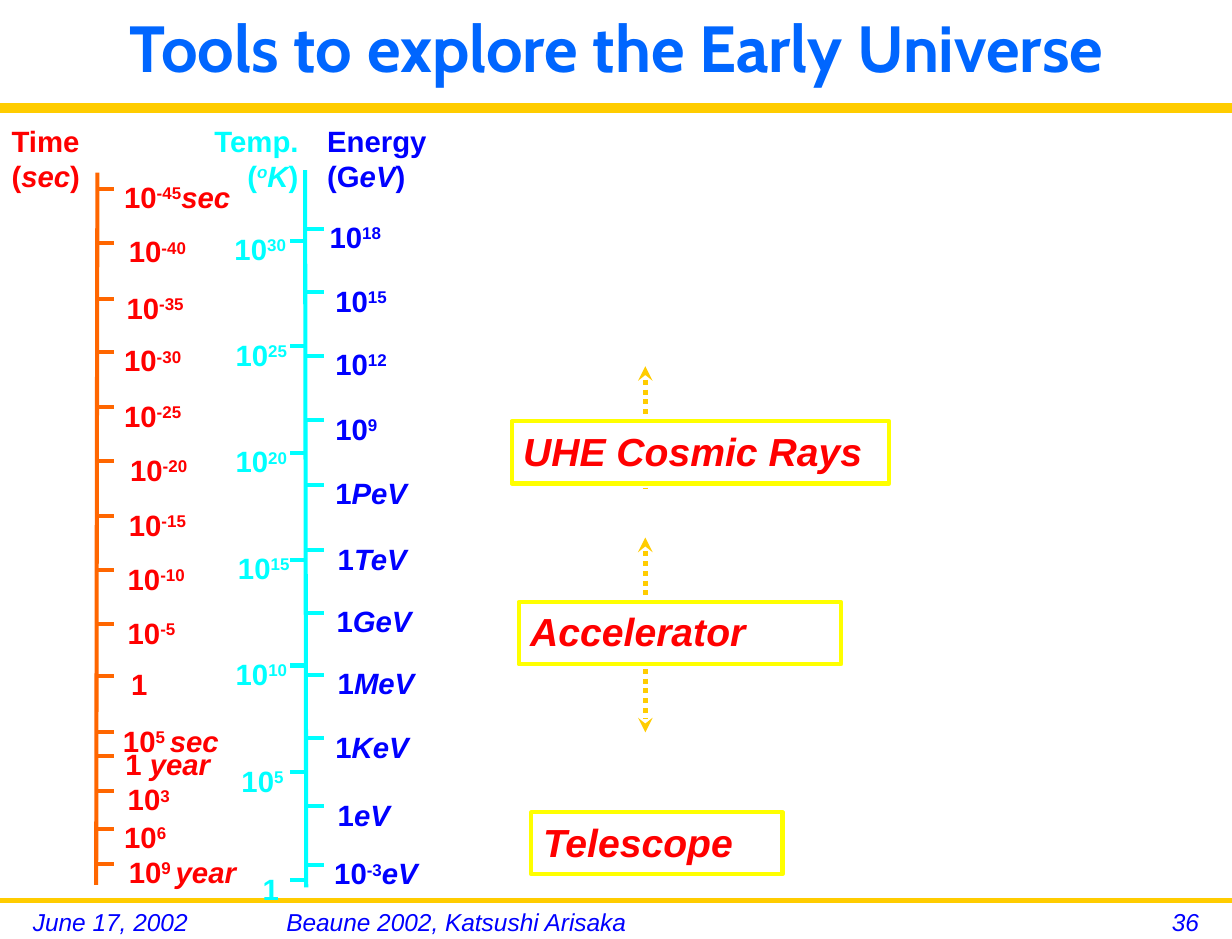
from pptx import Presentation
from pptx.dml.color import RGBColor
from pptx.enum.dml import MSO_LINE
from pptx.enum.shapes import MSO_CONNECTOR, MSO_SHAPE
from pptx.enum.text import MSO_ANCHOR, MSO_AUTO_SIZE, PP_ALIGN
from pptx.util import Inches, Pt
from lxml.etree import SubElement
from pptx.oxml.ns import qn

RED, BLUE, CYAN = "FF0000", "0000FF", "00FFFF"
GOLD, ORANGE, YELLOW = "FFCC00", "FF6600", "FFFF00"

TIMES = [
    ("10^-45^_sec_", 1.61, 0.96, 1.2), ("10^-40", 2.07, 1, 0.8),
    ("10^-35", 2.55, 0.98, 0.95), ("10^-30", 3, 0.96, 0.84),
    ("10^-25", 3.47, 0.96, 0.96), ("10^-20", 3.93, 1.01, 0.91),
    ("10^-15", 4.4, 1, 0.8), ("10^-10", 4.86, 0.99, 0.93),
    ("10^-5", 5.32, 0.99, 0.94), ("1", 5.76, 1.02, 0.71),
    ("10^5 ^_sec_", 6.24, 0.95, 1.13), ("1 _year_", 6.44, 0.97, 1.13),
    ("10^3", 6.74, 0.99, 0.71), ("10^6", 7.06, 0.96, 0.71),
    ("10^9 ^_year_", 7.36, 1, 1.58),
]
TEMPS = [
    ("10^30", 2.05, 1.9, 0.81), ("10^25", 2.95, 1.91, 0.8),
    ("10^20", 3.86, 1.91, 0.8), ("10^15", 4.77, 1.93, 0.78),
    ("10^10", 5.67, 1.91, 0.68), ("10^5", 6.58, 1.96, 0.67),
    ("1", 7.5, 2.14, 0.42),
]
POWERS = [
    ("10^18", 1.95, 2.71, 1.29), ("10^15", 2.49, 2.76, 0.78),
    ("10^12", 3.03, 2.76, 0.78), ("10^9", 3.58, 2.76, 0.78),
    ("1_PeV_", 4.13, 2.76, 1.1), ("1_TeV_", 4.69, 2.78, 1.01),
    ("1_GeV_", 5.22, 2.77, 1.06), ("1_MeV_", 5.75, 2.78, 1.02),
    ("1_KeV_", 6.29, 2.76, 1.04), ("1_eV_", 6.87, 2.78, 0.99),
    ("10^-3^_eV_", 7.37, 2.75, 0.99),
]


def color(code):
    return RGBColor.from_string(code)


def write(frame, text, size=18, tint=RED, font="Arial", bold=True,
          slant=False, align=PP_ALIGN.LEFT, space=None, indent=0,
          anchor=MSO_ANCHOR.TOP, inset=0.1, grow=True):
    frame.word_wrap = True
    frame.auto_size = MSO_AUTO_SIZE.SHAPE_TO_FIT_TEXT if grow else MSO_AUTO_SIZE.NONE
    frame.vertical_anchor = anchor
    frame.margin_left = frame.margin_right = Inches(inset)
    frame.margin_top = frame.margin_bottom = Inches(0.05)
    for row, line in enumerate(text.split("\n")):
        para = frame.add_paragraph() if row else frame.paragraphs[0]
        para.alignment = align
        if space:
            para.line_spacing = space
        if row and indent:
            para._p.get_or_add_pPr().set("marL", str(Inches(indent)))
        for high, part in enumerate(line.split("^")):
            for lean, bit in enumerate(part.split("_")):
                if not bit:
                    continue
                run = para.add_run()
                run.text = bit
                run.font.name = font
                run.font.size = Pt(size)
                run.font.bold = bold
                run.font.italic = slant or lean % 2 == 1
                run.font.color.rgb = color(tint)
                if high % 2:
                    run._r.get_or_add_rPr().set("baseline", "30000")


def label(slide, text, left, top, width, height=0.4, **style):
    box = slide.shapes.add_textbox(
        Inches(left), Inches(top), Inches(width), Inches(height))
    write(box.text_frame, text, **style)


def rule(slide, start, end, tint, weight=2.5):
    line = slide.shapes.add_connector(
        MSO_CONNECTOR.STRAIGHT, *map(Inches, start + end))
    line.line.color.rgb = color(tint)
    line.line.width = Pt(weight)
    SubElement(line._element.spPr, qn("a:effectLst"))
    return line


def arrow(slide, x, top, foot, ends):
    line = rule(slide, (x, top), (x, foot), GOLD, 3).line
    line.dash_style = MSO_LINE.ROUND_DOT
    for end in ends:
        SubElement(line._get_or_add_ln(), qn(f"a:{end}"), type="stealth")


def scale(slide, rows, x, tint, hue):
    for text, y, left, width in rows:
        rule(slide, (x, y), (x + 0.14, y), hue)
        label(slide, text, left, y - 0.13, width, tint=tint)


def frame(slide, text, left, top, width):
    box = slide.shapes.add_shape(
        MSO_SHAPE.RECTANGLE, Inches(left), Inches(top), Inches(width), Inches(0.53))
    box.shadow.inherit = False
    box.fill.solid()
    box.fill.fore_color.rgb = color("FFFFFF")
    box.line.color.rgb = color(YELLOW)
    box.line.width = Pt(2.5)
    write(box.text_frame, text, size=24, slant=True)


def main():
    deck = Presentation()
    deck.slide_width, deck.slide_height = Inches(10.5), Inches(8)
    slide = deck.slides.add_slide(deck.slide_layouts[5])

    title = slide.shapes.title
    title.left, title.top = Inches(0.17), Inches(0)
    title.width, title.height = Inches(10.17), Inches(0.92)
    write(title.text_frame, "Tools to explore the Early Universe", size=40,
          tint="0066FF", font="Cabin", align=PP_ALIGN.CENTER, space=0.8,
          anchor=MSO_ANCHOR.MIDDLE, inset=0.11, grow=False)

    rule(slide, (0, 0.92), (10.5, 0.92), GOLD, 6)
    rule(slide, (0, 7.67), (10.5, 7.67), GOLD, 3)
    for text, left, width, align in [
        ("June 17, 2002", 0.17, 2.08, PP_ALIGN.LEFT),
        ("Beaune 2002, Katsushi Arisaka", 2.33, 6.08, PP_ALIGN.LEFT),
        ("36", 8.5, 1.83, PP_ALIGN.RIGHT),
    ]:
        label(slide, text, left, 7.68, width, 0.32, size=15, tint=BLUE,
              bold=False, slant=True, align=align, inset=0.11, grow=False)

    rule(slide, (0.83, 1.47), (0.82, 7.54), ORANGE)
    scale(slide, TIMES, 0.83, RED, ORANGE)
    label(slide, "Time\n(_sec_)", 0, 1, 0.92, 0.7)

    rule(slide, (2.6, 1.45), (2.61, 7.56), CYAN)
    scale(slide, TEMPS, 2.47, CYAN, CYAN)
    scale(slide, POWERS, 2.62, BLUE, CYAN)
    label(slide, "Temp.\n(^_o_^_K_)", 1.73, 1, 1.17, 0.7, tint=CYAN, indent=0.28)
    label(slide, "Energy (G_eV_)", 2.69, 1, 1.13, 0.7, tint=BLUE)

    arrow(slide, 5.5, 4.58, 6.24, ["headEnd", "tailEnd"])
    frame(slide, "Accelerator", 4.42, 5.13, 2.75)
    frame(slide, "Telescope", 4.53, 6.92, 2.14)
    arrow(slide, 5.5, 3.12, 4.16, ["headEnd"])
    frame(slide, "UHE Cosmic Rays", 4.36, 3.59, 3.22)

    deck.save("out.pptx")


if __name__ == "__main__":
    main()
